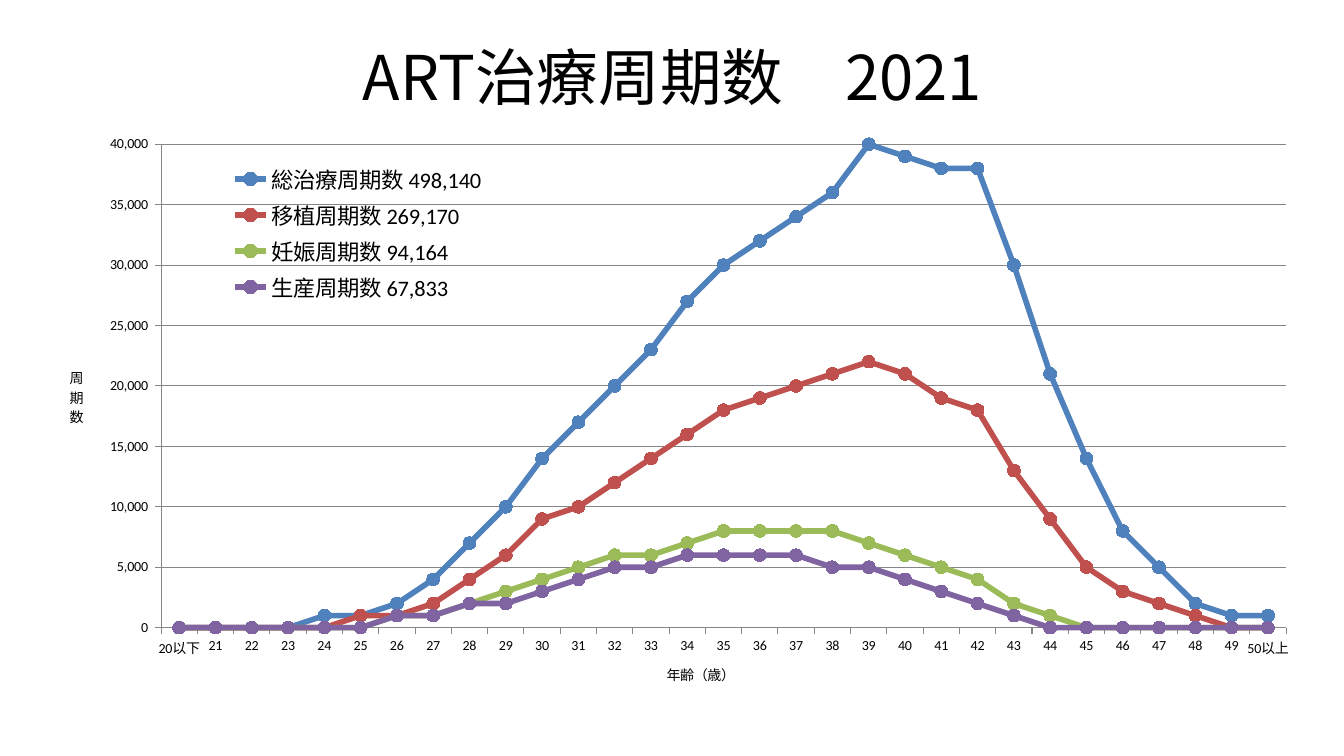
from lxml import etree
from pptx import Presentation, util as u
from pptx.chart.data import CategoryChartData
from pptx.dml.color import RGBColor
from pptx.enum import chart as charts, text
from pptx.oxml import ns

FONT, BLACK, GRAY = "Calibri", "000000", "868686"


def color(value):
    return RGBColor.from_string(value)


def write(frame, words, size, font=FONT, fill=BLACK):
    para = frame.paragraphs[0]
    para.alignment = text.PP_ALIGN.CENTER
    span = para.add_run()
    span.text = words
    span.font.size, span.font.name, span.font.bold = u.Pt(size), font, False
    span.font.color.rgb = color(fill)
    east_asian = etree.SubElement(span.font._element, ns.qn("a:ea"))
    east_asian.set("typeface", "Noto Sans CJK JP")


deck = Presentation()
deck.slide_width, deck.slide_height = u.Inches(13.33), u.Inches(7.5)
page = deck.slides.add_slide(deck.slide_layouts[5])

title = page.shapes.title
title.left, title.top = u.Inches(0.67), u.Inches(0.3)
title.width, title.height = u.Inches(12), u.Inches(0.91)
title.text_frame.vertical_anchor = text.MSO_ANCHOR.MIDDLE
write(title.text_frame, "ART治療周期数　2021", 44, font="Noto Sans CJK JP")

cycles_in_thousands = [
    ("総治療周期数 498,140", "4F81BD",
     [0, 0, 0, 0, 1, 1, 2, 4, 7, 10, 14, 17, 20, 23, 27, 30,
      32, 34, 36, 40, 39, 38, 38, 30, 21, 14, 8, 5, 2, 1, 1]),
    ("移植周期数 269,170", "C0504D",
     [0, 0, 0, 0, 0, 1, 1, 2, 4, 6, 9, 10, 12, 14, 16, 18,
      19, 20, 21, 22, 21, 19, 18, 13, 9, 5, 3, 2, 1, 0, 0]),
    ("妊娠周期数 94,164", "9BBB59",
     [0, 0, 0, 0, 0, 0, 1, 1, 2, 3, 4, 5, 6, 6, 7, 8,
      8, 8, 8, 7, 6, 5, 4, 2, 1, 0, 0, 0, 0, 0, 0]),
    ("生産周期数 67,833", "8064A2",
     [0, 0, 0, 0, 0, 0, 1, 1, 2, 2, 3, 4, 5, 5, 6, 6,
      6, 6, 5, 5, 4, 3, 2, 1, 0, 0, 0, 0, 0, 0, 0]),
]

data = CategoryChartData(number_format="#,##0")
data.categories = ["20以下", *map(str, range(21, 50)), "50以上"]
for name, _, thousands in cycles_in_thousands:
    data.add_series(name, [1000 * count for count in thousands])
chart = page.shapes.add_chart(
    charts.XL_CHART_TYPE.LINE_MARKERS,
    u.Inches(0.44), u.Inches(1.3), u.Inches(12.44), u.Inches(5.53), data).chart
chart.has_title = False
chart.font.size, chart.font.name = u.Pt(10), FONT
chart.font.color.rgb = color(BLACK)
chart.plots[0].vary_by_categories = False

for series, (_, shade, _) in zip(chart.plots[0].series, cycles_in_thousands):
    series.smooth = False
    series.format.line.width = u.Pt(4)
    series.format.line.color.rgb = color(shade)
    series.marker.style, series.marker.size = charts.XL_MARKER_STYLE.CIRCLE, 9
    series.marker.format.fill.solid()
    series.marker.format.fill.fore_color.rgb = color(shade)
    series.marker.format.line.color.rgb = color(shade)

ages, counts = chart.category_axis, chart.value_axis
for axis, label in ((ages, "年齢（歳）"), (counts, "周期数")):
    axis.major_tick_mark = charts.XL_TICK_MARK.OUTSIDE
    axis.minor_tick_mark = charts.XL_TICK_MARK.NONE
    axis.format.line.color.rgb = color(GRAY)
    axis.format.line.width = u.Pt(0.75)
    write(axis.axis_title.text_frame, label, 10)
counts.minimum_scale, counts.maximum_scale, counts.major_unit = 0, 40000, 5000
counts.has_major_gridlines = True
counts.major_gridlines.format.line.color.rgb = color(GRAY)
counts.major_gridlines.format.line.width = u.Pt(0.75)
counts.tick_labels.number_format = r"#,##0_);[Red]\(#,##0\)"
counts.tick_labels.number_format_is_linked = False
stacked = chart.element.xpath(".//c:valAx/c:title//a:bodyPr")[0]
stacked.set("rot", "0")
stacked.set("vert", "wordArtVertRtl")

chart.has_legend = True
chart.legend.position = charts.XL_LEGEND_POSITION.RIGHT
chart.legend.include_in_layout = False
chart.legend.font.size, chart.legend.font.name = u.Pt(16), FONT
chart.legend.font.color.rgb = color(BLACK)

places = {
    "c:plotArea": dict(layoutTarget="inner", xMode="edge", yMode="edge", x=0.093, y=0.024, w=0.897, h=0.877),
    "c:legend": dict(xMode="edge", yMode="edge", x=0.14, y=0.05, w=0.22, h=0.27),
    "c:catAx/c:title": dict(xMode="edge", yMode="edge", x=0.494, y=0.96),
    "c:valAx/c:title": dict(xMode="edge", yMode="edge", x=0.018, y=0.422),
}
for place, settings in places.items():
    part = chart.element.xpath(f".//{place}")[0]
    for old in part.findall(ns.qn("c:layout")):
        part.remove(old)
    layout = etree.Element(ns.qn("c:layout"))
    manual = etree.SubElement(layout, ns.qn("c:manualLayout"))
    for key, value in settings.items():
        etree.SubElement(manual, ns.qn(f"c:{key}")).set("val", str(value))
    overlay = part.find(ns.qn("c:overlay"))
    if overlay is None:
        part.insert(1 if part.find(ns.qn("c:tx")) is not None else 0, layout)
    else:
        overlay.addprevious(layout)

deck.save("out.pptx")
